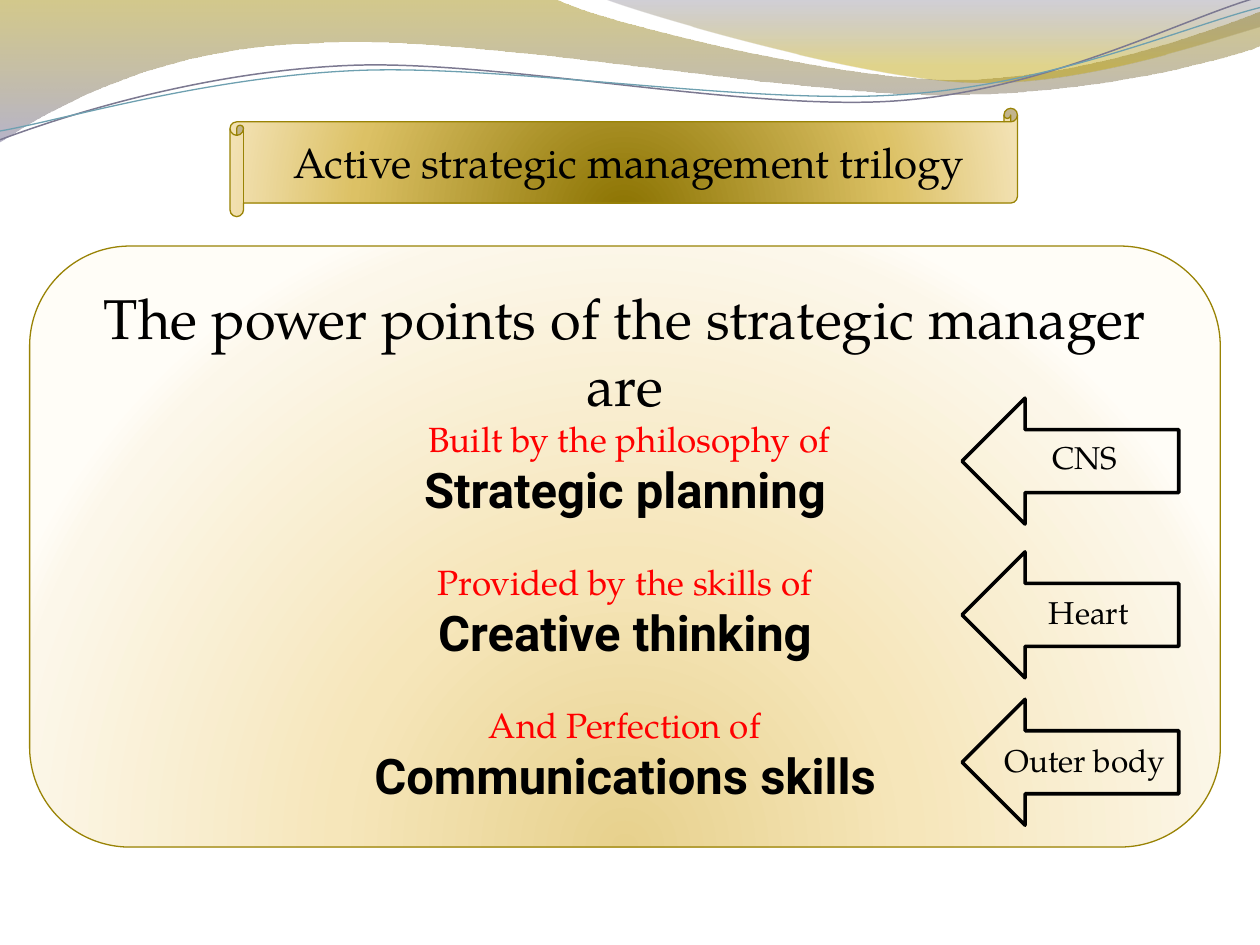
from lxml.etree import SubElement
from pptx import Presentation
from pptx.dml.color import RGBColor
from pptx.enum.shapes import MSO_SHAPE as Shape
from pptx.enum.text import MSO_AUTO_SIZE as AutoSize, PP_ALIGN as Align
from pptx.oxml.ns import qn
from pptx.util import Inches, Pt

SERIF, SANS = "TeX Gyre Pagella", "Roboto"
BLACK, RED, GOLD = "000000", "FF0000", "998305"


def color(value):
    return RGBColor.from_string(value)


def write(para, text, size=18, font=SERIF, ink=BLACK, bold=False, before=0, rtl=True):
    para.alignment = Align.CENTER
    if rtl:
        para._p.get_or_add_pPr().set("rtl", "1")
    if before:
        para.space_before = Pt(before)
    span = para.add_run()
    span.text = text
    span.font.size, span.font.name, span.font.bold = Pt(size), font, bold
    span.font.color.rgb = color(ink)


class Painter:
    """Places elements on a page divided into 100 columns and 75 rows."""

    def __init__(self, deck):
        self.cell = deck.slide_width / 100
        self.page = deck.slides.add_slide(deck.slide_layouts[6])

    def units(self, values):
        return [round(value * self.cell) for value in values]

    def style(self, shape, line=None, width=0.75, stops=None, linear=False):
        shape.shadow.inherit = False
        shape.fill.background()
        if stops:
            self.gradient(shape, stops, linear)
        if line:
            shape.line.color.rgb, shape.line.width = color(line), Pt(width)
        else:
            shape.line.fill.background()

    def gradient(self, shape, stops, linear):
        empty = shape._element.spPr.find(qn("a:noFill"))
        fill = empty.makeelement(qn("a:gradFill"), {"rotWithShape": "1"})
        stop_list = SubElement(fill, qn("a:gsLst"))
        for position, value, opacity in stops:
            stop = SubElement(stop_list, qn("a:gs"), pos=str(position * 1000))
            tint = SubElement(stop, qn("a:srgbClr"), val=value)
            if opacity < 100:
                SubElement(tint, qn("a:alpha"), val=str(opacity * 1000))
        if linear:
            SubElement(fill, qn("a:lin"), ang="5400000", scaled="0")
        else:
            shade = SubElement(fill, qn("a:path"), {"path": "circle"})
            SubElement(shade, qn("a:fillToRect"), l="50000", t="130000", r="50000", b="-30000")
        empty.getparent().replace(empty, fill)

    def wave(self, start, *segments, close=False, **style):
        builder = self.page.shapes.build_freeform(*self.units(start))
        builder.add_line_segments([self.units(part[-2:]) for part in segments], close=close)
        shape = builder.convert_to_shape()
        straight = list(shape._element.iter(qn("a:lnTo")))
        for element, part in zip(straight, segments):
            if len(part) == 6:
                self.bend(shape, element, part[:2], part[2:4])
        self.style(shape, **style)

    def bend(self, shape, element, *controls):
        curve = element.makeelement(qn("a:cubicBezTo"))
        for control in controls:
            x, y = self.units(control)
            SubElement(curve, qn("a:pt"), x=str(x - shape.left), y=str(y - shape.top))
        element.getparent().replace(element, curve)
        curve.append(element[0])

    def shape(self, kind, *at, **style):
        self.style(self.page.shapes.add_shape(kind, *self.units(at)), **style)

    def text(self, *at, lines):
        frame = self.page.shapes.add_textbox(*self.units(at)).text_frame
        frame.word_wrap = True
        frame.auto_size = AutoSize.SHAPE_TO_FIT_TEXT
        for index, (text, style) in enumerate(lines):
            para = frame.add_paragraph() if index else frame.paragraphs[0]
            write(para, text, **style)


def main():
    deck = Presentation()
    deck.slide_width, deck.slide_height = Inches(10), Inches(7.5)
    painter = Painter(deck)

    painter.wave((0, 0), (44, -0.1), (47.6, 1.7, 66.4, 6.3, 75.8, 6.3),
                 (85.3, 6.3, 95.8, 2.6, 100, 0.9), (100.1, 3.6),
                 (98.3, 4.4, 87, 7.6, 74.6, 7.5), (62.2, 7.5, 38.2, 2.8, 25.7, 3.4),
                 (12.9, 3.6, 4.6, 8.3, -0.1, 11.3), close=True, linear=True,
                 stops=[(0, "9E8700", 45), (100, "7B769C", 55)])
    painter.wave((47.9, -0.1), (50.9, 1.1, 68.2, 6.2, 76.9, 6.5),
                 (85.6, 6.9, 96.1, 3.2, 100, 2.1), (100, 0), close=True, linear=True,
                 stops=[(0, "66627C", 30), (80, "BDA100", 45)])
    painter.wave((0, 11.1), (4.8, 9.3, 15.8, 5.7, 27.7, 5.2),
                 (39.5, 4.7, 59.3, 8.9, 71.3, 8), (83.3, 7.1, 93.8, 1.5, 99.8, -0.2),
                 line="7C7991", width=0.85)
    painter.wave((0, 10.4), (4.7, 9.6, 16.4, 6.1, 28.3, 5.6),
                 (40.3, 5.1, 59.7, 8.4, 71.7, 7.5), (83.6, 6.7, 94.1, 2.1, 100, 0.6),
                 line="6EA0B0")

    painter.shape(Shape.HORIZONTAL_SCROLL, 18.25, 8.6, 62.5, 8.6, line=GOLD,
                  stops=[(0, "8A7200", 100), (68, "DCC165", 100), (100, "F2E1B2", 100)])
    painter.text(22.15, 10.35, 55.5, 5,
                 lines=[("Active strategic management trilogy ", {"size": 24})])

    painter.shape(Shape.ROUNDED_RECTANGLE, 2.35, 19.53, 94.5, 47.7, line=GOLD,
                  stops=[(0, "E7D18D", 100), (43, "F6E6BA", 100),
                         (93, "FCF7EA", 100), (100, "FFFDF7", 100)])
    lines = [("The power points of the strategic manager are", {"size": 32})]
    powers = [("Built by the philosophy of ", "Strategic planning", True),
              ("Provided by the skills of", "Creative thinking", True),
              ("And Perfection of", "Communications skills", False)]
    for index, (source, power, rtl) in enumerate(powers):
        lines.append((source, {"size": 20, "ink": RED, "rtl": rtl,
                               "before": 24 if index else 0}))
        lines.append((power, {"size": 28, "font": SANS, "bold": True}))
    painter.text(5.45, 22, 88.3, 42.7, lines=lines)

    for label, top, drop in [("CNS", 31.6, 2.65), ("Heart ", 43.8, 2.8),
                             ("Outer body", 55.5, 2.8)]:
        painter.shape(Shape.LEFT_ARROW, 76.35, top, 17.2, 10, line=BLACK, width=2)
        painter.text(78.7, top + drop, 14.8, 4.3, lines=[(label, {})])

    deck.save("out.pptx")


if __name__ == "__main__":
    main()
